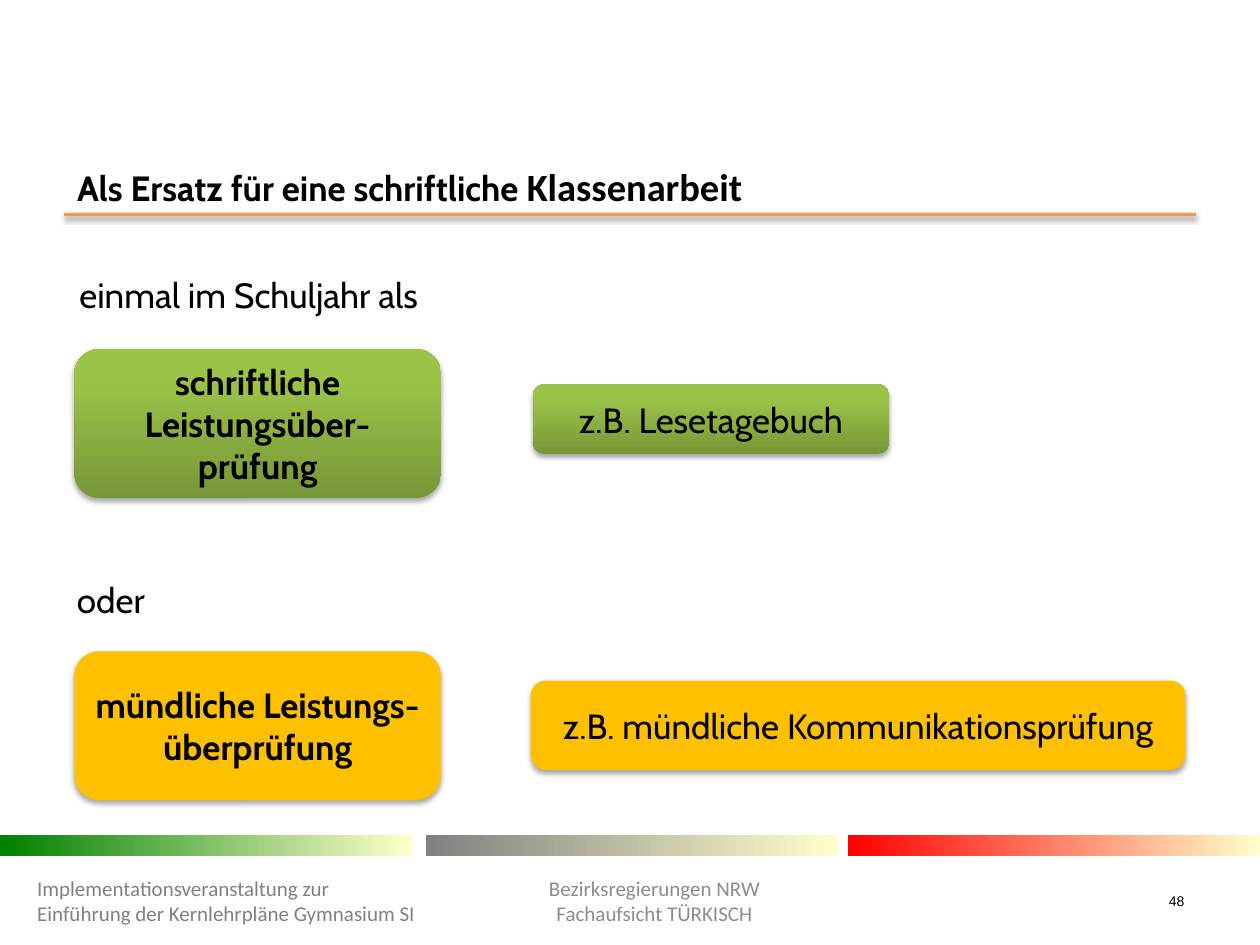
from lxml.etree import SubElement as Sub
from pptx import Presentation
from pptx.dml.color import RGBColor as RGB
from pptx.enum.shapes import MSO_CONNECTOR as Line, MSO_SHAPE as Kind
from pptx.enum.text import MSO_ANCHOR as Anchor, MSO_AUTO_SIZE as Auto, PP_ALIGN as Align
from pptx.oxml.ns import qn
from pptx.util import Cm, Pt

COLORS = {
    "black": "000000", "gray": "808080", "pale": "8C8C8C", "cream": "FFFFCC",
    "green": "008000", "red": "FF0000", "orange": "F79646", "amber": "FFC000",
    "moss": "779737", "lime": "9BC348",
}
BODY = {"name": "Cabin", "size": 20, "color": "black", "bold": False}
BOLD = {**BODY, "bold": True}
FOOT = {**BODY, "name": "Calibri", "size": 12, "color": "gray"}

# Places are left, top, width, height in centimetres
TITLE = [("Als Ersatz für eine schriftliche ", BOLD),
         ("Klassenarbeit", {**BOLD, "name": "Calibri", "size": 22})]
TITLE_AT = (1.3, 3.15, 22.68, 1.19)
RULE = (1.3, 4.32, 24.1, 4.32)
BARS = [("green", 0), ("gray", 8.59), ("red", 17.1)]
BAR_TOP, BAR_W, BAR_H = 16.84, 8.3, 0.41
LEADS = [("einmal im Schuljahr als", (1.35, 5.38, 22.68, 1.12)),
         ("oder", (1.3, 11.53, 22.68, 1.12))]
CARDS = [
    ("schriftliche Leistungsüber-prüfung", (1.5, 7.04, 7.39, 3), ("moss", "lime"), BOLD),
    ("z.B. Lesetagebuch", (10.74, 7.75, 7.19, 1.4), ("moss", "lime"), BODY),
    ("mündliche Leistungs-überprüfung", (1.5, 13.13, 7.39, 3), ("amber",), BOLD),
    ("z.B. mündliche Kommunikationsprüfung", (10.7, 13.72, 13.2, 1.8), ("amber",), BODY),
]
FOOTER = [
    (["Implementationsveranstaltung zur\vEinführung der Kernlehrpläne Gymnasium SI"],
     (0.5, 17.65, 8.23, 1.02), FOOT, Align.LEFT),
    (["Bezirksregierungen NRW", "Fachaufsicht TÜRKISCH"],
     (9.5, 17.25, 7.39, 1.8), {**FOOT, "color": "pale"}, Align.CENTER),
    (["48"], (22.5, 17.65, 1.63, 1.02),
     {**FOOT, "name": "Arial", "size": 8, "color": "black"}, Align.RIGHT),
]


def rgb(name):
    return RGB.from_string(COLORS[name])


def style(font, look):
    for key, val in look.items():
        if key == "color":
            font.color.rgb = rgb(val)
        else:
            setattr(font, key, Pt(val) if key == "size" else val)


def write(shape, paras, align, anchor):
    """Fill a shape with paragraphs, each a list of (text, look) runs."""
    frame = shape.text_frame
    for key, val in {"word_wrap": True, "auto_size": Auto.NONE,
                     "vertical_anchor": anchor}.items():
        setattr(frame, key, val)
    for i, runs in enumerate(paras):
        para = frame.add_paragraph() if i else frame.paragraphs[0]
        para.alignment = align
        for text, look in runs:
            for j, part in enumerate(text.split("\v")):
                if j:
                    para.add_line_break()
                run = para.add_run()
                run.text = part
                style(run.font, look)


def shade(shape, names, angle, end=1):
    """Fill with one colour, or with a gradient between two."""
    fill = shape.fill
    if len(names) == 1:
        fill.solid()
        fill.fore_color.rgb = rgb(names[0])
    else:
        fill.gradient()
        fill.gradient_angle = angle
        for stop, name, pos in zip(fill.gradient_stops, names, (0, end)):
            stop.color.rgb = rgb(name)
            stop.position = pos
    shape.line.fill.background()


def shadow(shape, dist, alpha):
    shape.shadow.inherit = False
    effects = shape.element.spPr.find(qn("a:effectLst"))
    outer = Sub(effects, qn("a:outerShdw"), blurRad=str(Pt(3.1)), dist=str(Pt(dist)),
                dir="5400000", rotWithShape="0")
    tint = Sub(outer, qn("a:srgbClr"), val=COLORS["black"])
    Sub(tint, qn("a:alpha"), val=str(alpha * 1000))


def main():
    deck = Presentation()
    deck.slide_width, deck.slide_height = Cm(25.4), Cm(19.05)
    slide = deck.slides.add_slide(deck.slide_layouts[5])
    shapes = slide.shapes

    title = shapes.title
    for key, val in zip(("left", "top", "width", "height"), TITLE_AT):
        setattr(title, key, Cm(val))
    write(title, [TITLE], Align.LEFT, Anchor.TOP)

    rule = shapes.add_connector(Line.STRAIGHT, *map(Cm, RULE))
    rule.line.color.rgb = rgb("orange")
    rule.line.width = Pt(2)
    Sub(rule.element.spPr, qn("a:effectLst"))
    shadow(rule, 1.6, 38)

    for name, left in BARS:
        bar = shapes.add_shape(Kind.RECTANGLE, *map(Cm, (left, BAR_TOP, BAR_W, BAR_H)))
        bar.shadow.inherit = False
        shade(bar, (name, "cream"), 0)

    for text, at in LEADS:
        box = shapes.add_textbox(*map(Cm, at))
        write(box, [[(text, BODY)]], Align.LEFT, Anchor.TOP)

    for text, at, names, look in CARDS:
        card = shapes.add_shape(Kind.ROUNDED_RECTANGLE, *map(Cm, at))
        shade(card, names, 90, 0.8)
        shadow(card, 1.8, 35)
        write(card, [[(text, look)]], Align.CENTER, Anchor.MIDDLE)

    for lines, at, look, align in FOOTER:
        box = shapes.add_textbox(*map(Cm, at))
        write(box, [[(line, look)] for line in lines], align, Anchor.MIDDLE)

    deck.save("out.pptx")


if __name__ == "__main__":
    main()
